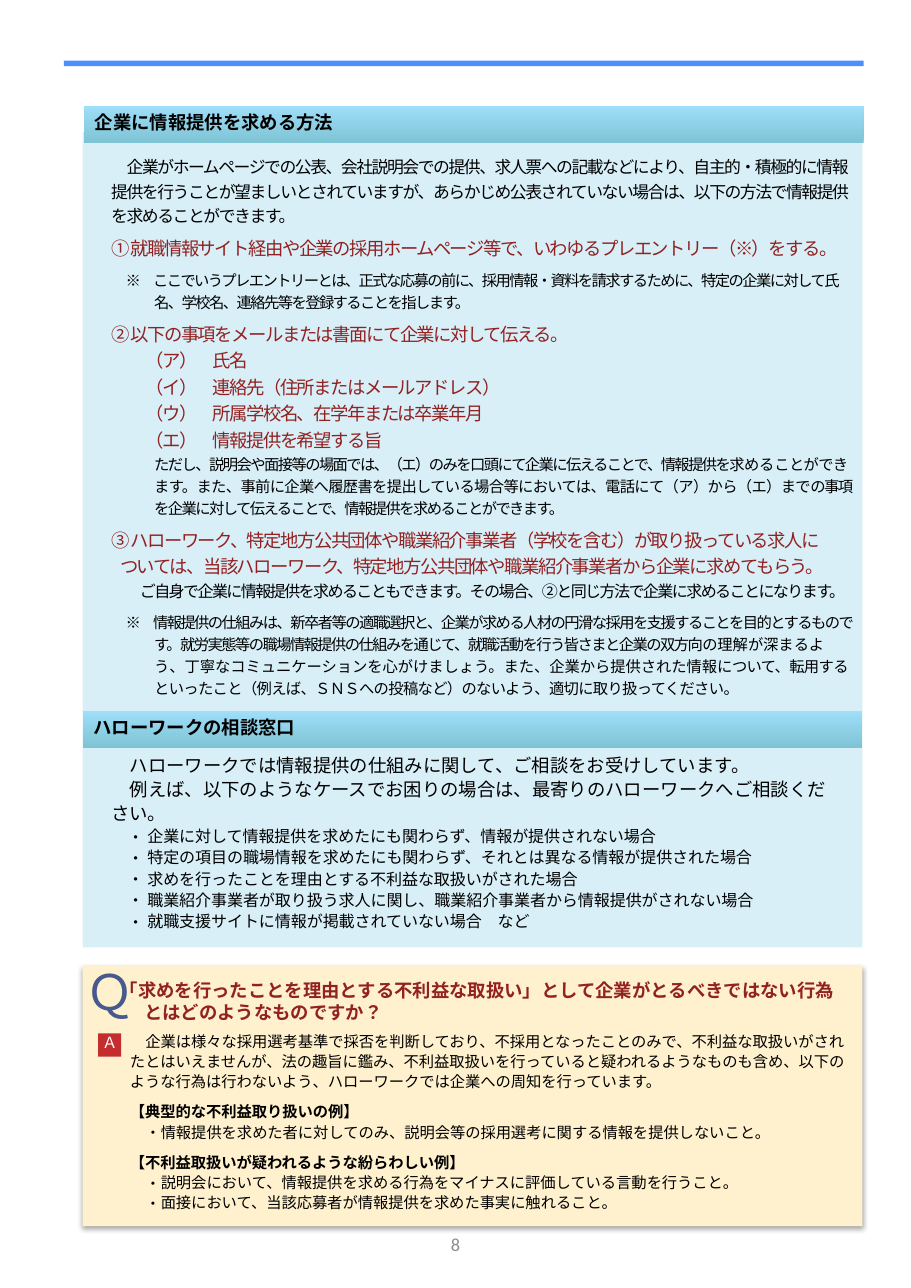
from lxml import etree
from pptx import Presentation
from pptx.dml.color import RGBColor
from pptx.enum.lang import MSO_LANGUAGE_ID
from pptx.enum.shapes import MSO_SHAPE
from pptx.enum.text import MSO_ANCHOR, MSO_AUTO_SIZE, PP_ALIGN
from pptx.oxml.ns import qn
from pptx.util import Inches, Pt

RECTANGLE = MSO_SHAPE.RECTANGLE
TOP, MIDDLE = MSO_ANCHOR.TOP, MSO_ANCHOR.MIDDLE
LEFT, CENTER = PP_ALIGN.LEFT, PP_ALIGN.CENTER
NO_AUTOFIT = MSO_AUTO_SIZE.NONE
JAPANESE_LANGUAGE = MSO_LANGUAGE_ID.JAPANESE

JAPANESE, LATIN = "Noto Sans CJK JP", "Calibri"
COLORS = {
    "ink": "000000", "red": "922222", "badge": "C32D2E", "white": "FFFFFF",
    "rule": "4C8FFF", "panel": "D8EFF8", "cream": "FFF1CE", "question": "475A8D",
    "heading_bottom": "7EC3D4", "heading_top": "9FDFF9", "page": "8C8C8C",
}


def rgb(name):
    return RGBColor.from_string(COLORS[name])


def place(shape, box):
    shape.left, shape.top, shape.width, shape.height = (Inches(v) for v in box)


def set_frame(shape, insets=(0.1, 0.05, 0.1, 0.05), anchor=TOP, wrap=True):
    frame = shape.text_frame
    frame.margin_left, frame.margin_top, frame.margin_right, frame.margin_bottom = (
        Inches(v) for v in insets)
    frame.vertical_anchor = anchor
    frame.auto_size = NO_AUTOFIT
    frame.word_wrap = wrap
    return frame


def add_text_box(slide, box, **frame_options):
    return set_frame(slide.shapes.add_textbox(*(Inches(v) for v in box)), **frame_options)


def add_panel(slide, box, color):
    panel = slide.shapes.add_shape(RECTANGLE, *(Inches(v) for v in box))
    panel.shadow.inherit = False
    panel.fill.solid()
    panel.fill.fore_color.rgb = rgb(color)
    panel.line.fill.background()
    return panel


def write(frame, *runs, size=10, leading=1.44, left=0, first=0, gap=0, color="ink",
          bold=False, spacing=0, bullet=None, align=LEFT, font=JAPANESE):
    """Add a paragraph; a run is a string or a (string, letter spacing) pair."""
    fresh = not frame.paragraphs[0].runs
    paragraph = frame.paragraphs[0] if fresh else frame.add_paragraph()
    paragraph.alignment = align
    paragraph.line_spacing = Pt(round(size * leading, 1))
    paragraph.space_before, paragraph.space_after = Pt(gap), Pt(0)
    properties = paragraph._p.get_or_add_pPr()
    properties.set("marL", str(Inches(left)))
    properties.set("indent", str(Inches(first) - Inches(left)))
    properties.set("hangingPunct", "0")
    if bullet:
        etree.SubElement(properties, qn("a:buFont")).set("typeface", font)
        etree.SubElement(properties, qn("a:buChar")).set("char", bullet)
    else:
        etree.SubElement(properties, qn("a:buNone"))
    for item in runs:
        text, run_spacing = (item, spacing) if isinstance(item, str) else item
        run = paragraph.add_run()
        run.text = text
        run.font.size, run.font.bold = Pt(size), bold
        run.font.color.rgb = rgb(color)
        run.font.name = font
        run.font.language_id = JAPANESE_LANGUAGE
        run_properties = run._r.get_or_add_rPr()
        run_properties.set("spc", str(int(run_spacing * 100)))
        etree.SubElement(run_properties, qn("a:ea")).set("typeface", font)


def style_heading(heading, text):
    heading.fill.gradient()
    heading.fill.gradient_angle = 90
    for stop, color in zip(heading.fill.gradient_stops, ("heading_bottom", "heading_top")):
        stop.color.rgb = rgb(color)
    write(set_frame(heading, anchor=MIDDLE), text, size=12, leading=1, bold=True)


def add_request_methods(slide, box):
    x, y, width, height = box
    heading, body = slide.shapes.title, slide.placeholders[1]
    for placeholder in (heading, body):
        placeholder.element.getparent().append(placeholder.element)
    place(heading, (x + 0.01, y, width, 0.34))
    style_heading(heading, "企業に情報提供を求める方法")
    place(body, (x + 0.16, y + 0.38, width - 0.15, height - 0.4))
    frame = set_frame(body)

    def method(text, **options):
        write(frame, text, size=12, color="red", spacing=-1, **options)

    write(frame, "企業がホームページでの公表、会社説明会での提供、求人票への記載などにより、自主的・積極的に"
          "情報提供を行うことが望ましいとされていますが、あらかじめ公表されていない場合は、以下の方法で"
          "情報提供を求めることができます。", size=11, first=0.14, spacing=-1)
    method("① 就職情報サイト経由や企業の採用ホームページ等で、いわゆるプレエントリー（※）をする。", gap=4.3)
    write(frame, "※　ここでいうプレエントリーとは、正式な応募の前に、採用情報・資料を請求するために、"
          "特定の企業に対して氏名、学校名、連絡先等を登録することを指します。",
          left=0.39, first=0.13, gap=6, spacing=-1)
    method("② 以下の事項をメールまたは書面にて企業に対して伝える。", gap=4.3)
    for item in ("（ア）　氏名", "（イ）　連絡先（住所またはメールアドレス）",
                 "（ウ）　所属学校名、在学年または卒業年月", "（エ）　情報提供を希望する旨"):
        method(item, left=0.31, first=0.31)
    write(frame, "ただし、説明会や面接等の場面では、（エ）のみを口頭にて企業に伝えることで、情報提供を求",
          ("める", -0.2),
          ("ことができます。また、事前に企業へ履歴書を提出している場合等においては、"
           "電話にて（ア）から（エ）まで", -0.4),
          "の事項を企業に対して伝えることで、情報提供を求めることができます。",
          left=0.39, first=0.39, gap=0.6, spacing=-1)
    method("③ ハローワーク、特定地方公共団体や職業紹介事業者（学校を含む）が取り扱っている求人に", gap=4.3)
    method("ついては、当該ハローワーク、特定地方公共団体や職業紹介事業者から企業に求めてもらう。",
           left=0.08, first=0.08)
    write(frame, "ご自身で企業に情報提供を求めることもできます。その場合、②と同じ方法で企業に求めることに"
          "なります。", size=10.5, left=0.26, first=0.26, spacing=-1)
    write(frame, "※　情報提供の仕組みは、新卒者等の適職選択と、企業が求める人材の円滑な採用を支援することを"
          "目的とするものです。就労実態等の職場情報提供の仕組みを通じて、就職活動を行う皆さまと企業の双方向",
          ("の理解が深まるよう、丁寧なコミュニケーションを心がけましょう。また、企業から提供された情報に", 0),
          ("ついて、転用するといったこと（例えば、ＳＮＳへの投稿など）のないよう、適切に取り扱ってください。",
           -0.4), left=0.39, first=0.13, gap=5.8, spacing=-1)


def add_consultation(slide, box):
    x, y, width, height = box
    style_heading(add_panel(slide, (x, y, width, 0.34), "panel"), "ハローワークの相談窓口")
    frame = add_text_box(slide, (x + 0.16, y + 0.33, width - 0.31, height - 0.4))
    for text in ("ハローワークでは情報提供の仕組みに関して、ご相談をお受けしています。",
                 "例えば、以下のようなケースでお困りの場合は、最寄りのハローワークへご相談ください。"):
        write(frame, text, size=12, leading=1.31, first=0.17)
    for case in ("企業に対して情報提供を求めたにも関わらず、情報が提供されない場合",
                 "特定の項目の職場情報を求めたにも関わらず、それとは異なる情報が提供された場合",
                 "求めを行ったことを理由とする不利益な取扱いがされた場合",
                 "職業紹介事業者が取り扱う求人に関し、職業紹介事業者から情報提供がされない場合",
                 "就職支援サイトに情報が掲載されていない場合　など"):
        write(frame, case, size=10.5, leading=1.32, left=0.33, first=0.15, bullet="・")


def add_soft_shadow(shape):
    effects = shape.element.spPr.find(qn("a:effectLst"))
    shadow = etree.SubElement(effects, qn("a:outerShdw"), blurRad=str(Pt(3.1)),
                              dist=str(Pt(1.8)), dir="5400000", rotWithShape="0")
    tint = etree.SubElement(shadow, qn("a:srgbClr"), val=COLORS["ink"])
    etree.SubElement(tint, qn("a:alpha"), val="35000")


def add_question_and_answer(slide, box):
    x, y, width, height = box
    add_soft_shadow(add_panel(slide, box, "cream"))
    question = add_text_box(slide, (x + 0.13, y + 0.08, width - 0.18, 0.5))
    write(question, "「求めを行ったことを理由とする不利益な取扱い」として企業がとるべきではない行為"
          "とはどのようなものですか？", size=12, leading=1.2, left=0.33, first=0.11,
          color="red", bold=True)
    write(add_text_box(slide, (x - 0.07, y - 0.08, 0.59, 0.64), wrap=False), "Ｑ",
          size=32, leading=1.2, color="question")
    badge = add_panel(slide, (x + 0.14, y + 0.62, 0.21, 0.21), "badge")
    write(set_frame(badge, insets=(0, 0, 0, 0.04), anchor=MIDDLE), "Ａ", leading=1.2,
          color="white", align=CENTER, font=LATIN)

    answer = add_text_box(slide, (x + 0.43, y + 0.54, width - 0.55, height - 0.6),
                          insets=(0, 0.05, 0, 0.05))
    write(answer, "企業は様々な採用選考基準で採否を判断しており、不採用となったことのみで、不利益な取扱いがされ"
          "たとはいえませんが、法の趣旨に鑑み、不利益取扱いを行っていると疑われるようなものも含め、以下の"
          "ような行為は行わないよう、ハローワークでは企業への周知を行っています。", leading=1.32, first=0.14)
    examples = {
        "【典型的な不利益取り扱いの例】": (
            "情報提供を求めた者に対してのみ、説明会等の採用選考に関する情報を提供しないこと。",),
        "【不利益取扱いが疑われるような紛らわしい例】": (
            "説明会において、情報提供を求める行為をマイナスに評価している言動を行うこと。",
            "面接において、当該応募者が情報提供を求めた事実に触れること。"),
    }
    for label, acts in examples.items():
        write(answer, label, leading=1.32, gap=6.6, bold=True)
        for act in acts:
            write(answer, act, leading=1.32, left=0.28, first=0.14, bullet="・")


def main():
    presentation = Presentation()
    presentation.slide_width, presentation.slide_height = Inches(8.27), Inches(11.69)
    slide = presentation.slides.add_slide(presentation.slide_layouts[1])
    add_panel(slide, (0.58, 0.55, 7.26, 0.05), "rule")
    add_panel(slide, (0.75, 1.2, 7.08, 7.4), "panel")
    add_request_methods(slide, (0.75, 0.96, 7.08, 5.49))
    add_consultation(slide, (0.75, 6.45, 7.08, 2.15))
    add_question_and_answer(slide, (0.75, 8.76, 7.08, 2.37))
    page = add_text_box(slide, (3.26, 10.92, 1.75, 0.75), anchor=MIDDLE)
    write(page, "8", size=12, leading=1.2, color="page", align=CENTER, font=LATIN)
    presentation.save("out.pptx")


if __name__ == "__main__":
    main()
